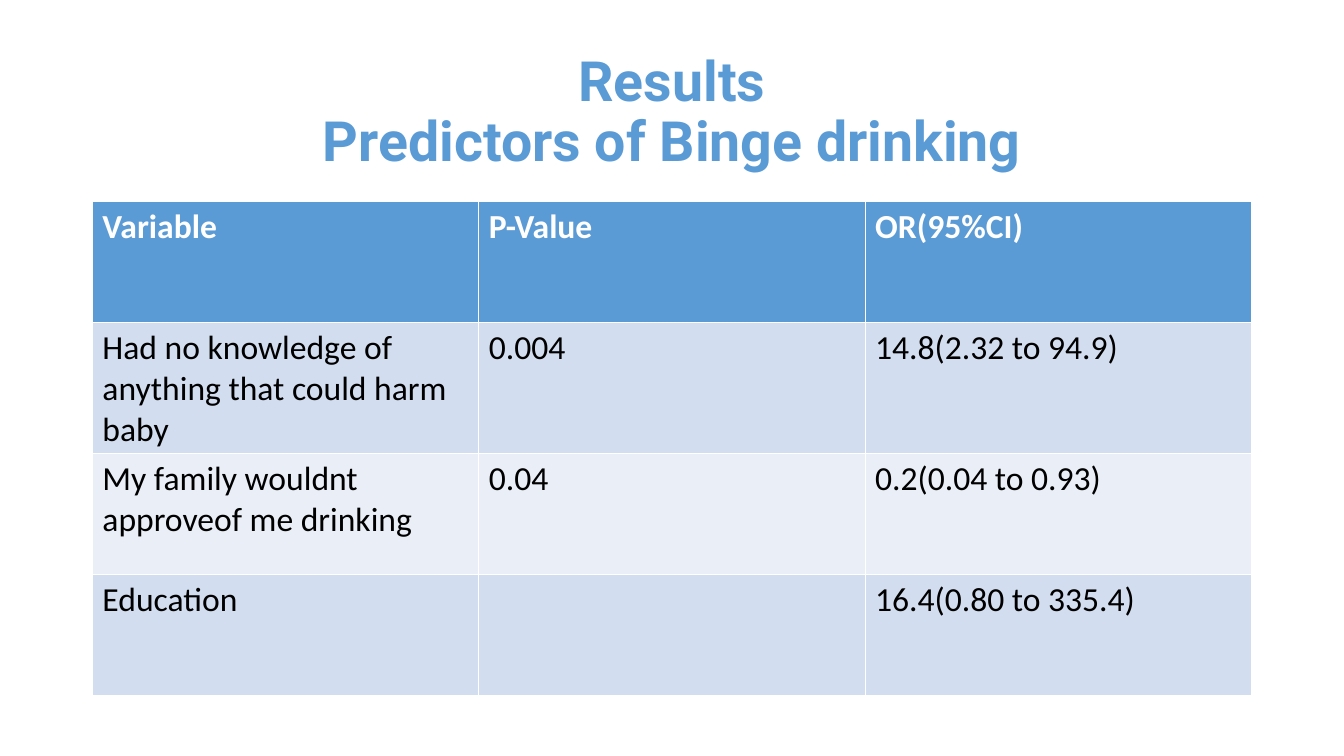
from pptx import Presentation
from pptx.dml.color import RGBColor
from pptx.enum.text import MSO_ANCHOR as Anchor, PP_ALIGN as Align
from pptx.util import Pt

COLORS = {"accent": "5B9BD5", "odd": "D2DEEF", "even": "EAEFF7",
          "white": "FFFFFF", "black": "000000"}
LEFT, WIDTH = 66, 828
TITLE_LINES = ["Results", "Predictors of Binge drinking"]
PREDICTORS = [
    ["Variable", "P-Value", "OR(95%CI)"],
    ["Had no knowledge of anything that could harm baby", "0.004", "14.8(2.32 to 94.9)"],
    ["My family wouldnt approveof me drinking", "0.04", "0.2(0.04 to 0.93)"],
    ["Education", "", "16.4(0.80 to 335.4)"],
]


def color(name):
    return RGBColor.from_string(COLORS[name])


def style_font(font, color_name, **values):
    for name, value in values.items():
        setattr(font, name, value)
    font.color.rgb = color(color_name)


def add_title(page, lines):
    box = page.shapes.add_textbox(Pt(LEFT), Pt(28.75), Pt(WIDTH), Pt(104.4))
    frame = box.text_frame
    frame.word_wrap = True
    frame.vertical_anchor = Anchor.MIDDLE
    para = frame.paragraphs[0]
    para.alignment = Align.CENTER
    para.line_spacing = 0.9
    para.text = "\v".join(lines)
    for span in para.runs:
        style_font(span.font, "accent", name="Roboto", size=Pt(39.6), bold=True)


def add_predictor_table(page, rows):
    """Add the table; its default style draws the white cell borders."""
    table = page.shapes.add_table(len(rows), len(rows[0]), Pt(LEFT), Pt(143.75),
                                  Pt(WIDTH), Pt(345.6)).table
    for row_index, row in enumerate(rows):
        header = row_index == 0
        fill = "accent" if header else "odd" if row_index % 2 else "even"
        for column_index, text in enumerate(row):
            cell = table.cell(row_index, column_index)
            cell.fill.solid()
            cell.fill.fore_color.rgb = color(fill)
            cell.text = text
            style_font(cell.text_frame.paragraphs[0].font,
                       "white" if header else "black", size=Pt(24))
            for span in cell.text_frame.paragraphs[0].runs:
                style_font(span.font, "white" if header else "black",
                           name="Calibri", size=Pt(24), bold=header)


def main():
    deck = Presentation()
    deck.slide_width, deck.slide_height = Pt(960), Pt(540)
    page = deck.slides.add_slide(deck.slide_layouts[6])
    add_title(page, TITLE_LINES)
    add_predictor_table(page, PREDICTORS)
    deck.save("out.pptx")


if __name__ == "__main__":
    main()
